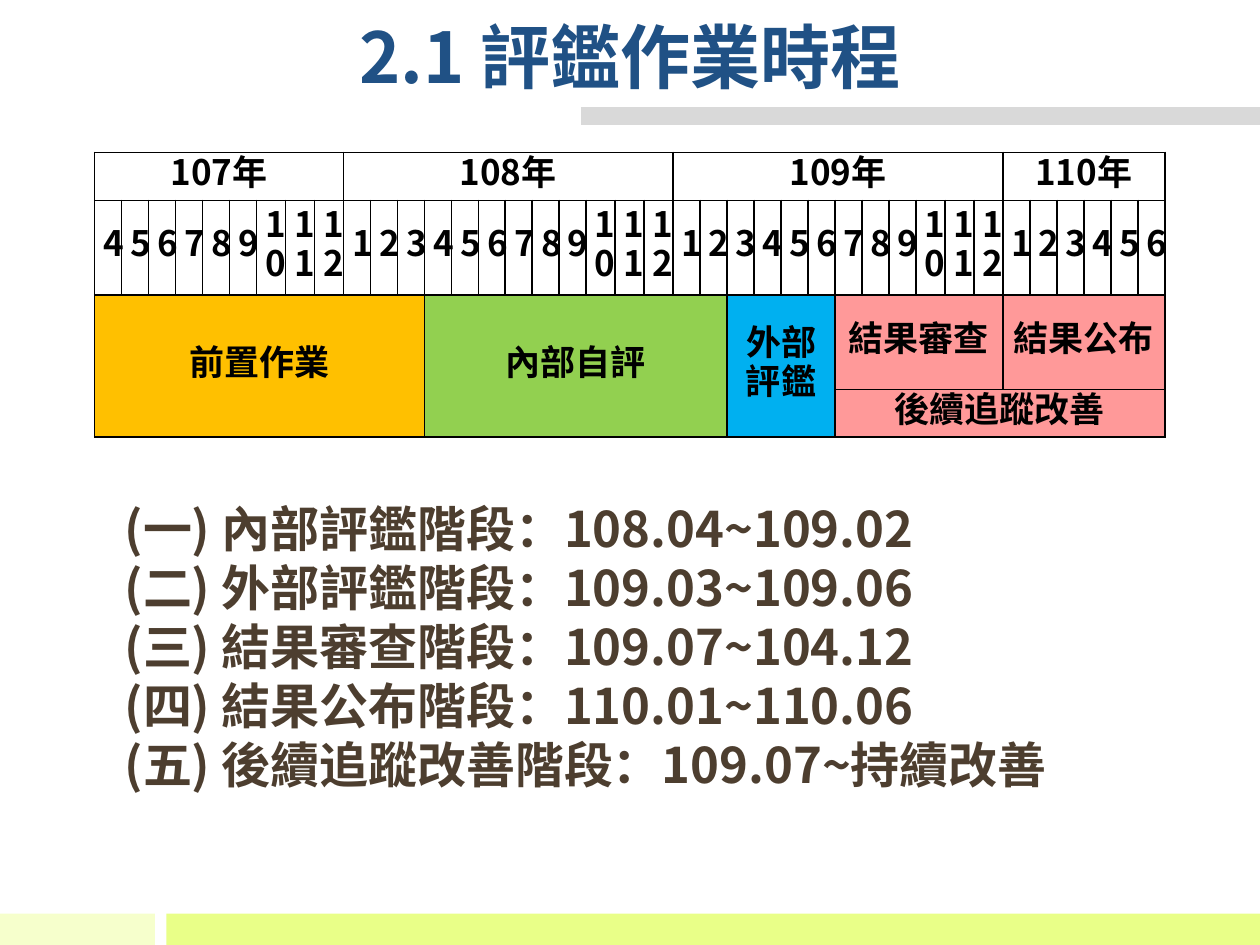
import dataclasses

import pptx
import pptx.dml.color
import pptx.enum.shapes
import pptx.enum.text
import pptx.oxml
import pptx.oxml.ns
import pptx.util

Inches = pptx.util.Inches
Pt = pptx.util.Pt
ALIGN = pptx.enum.text.PP_ALIGN


@dataclasses.dataclass(frozen=True)
class Theme:
    """Colours, font and type sizes of the slide."""
    font: str = "Noto Sans CJK SC"
    title_color: str = "205185"
    body_color: str = "4D3E2F"
    black: str = "000000"
    rule: str = "D9D9D9"
    pale_lime: str = "F6FFCC"
    lime: str = "E9FF88"
    preparation: str = "FFC000"
    internal: str = "92D050"
    external: str = "00B0F0"
    result: str = "FF9999"
    title_size: int = 40
    body_size: int = 28
    table_size: int = 20


THEME = Theme()
YEARS = [("107年", range(4, 13)), ("108年", range(1, 13)),
         ("109年", range(1, 13)), ("110年", range(1, 7))]
PHASES = [
    ("前置作業", 2, 0, 2, 12, THEME.preparation),
    ("內部自評", 2, 12, 2, 11, THEME.internal),
    ("外部評鑑", 2, 23, 2, 4, THEME.external),
    ("結果審查", 2, 27, 1, 6, THEME.result),
    ("結果公布", 2, 33, 1, 6, THEME.result),
    ("後續追蹤改善", 3, 27, 1, 12, THEME.result),
]
STAGES = [
    "(一) 內部評鑑階段：108.04~109.02",
    "(二) 外部評鑑階段：109.03~109.06",
    "(三) 結果審查階段：109.07~104.12",
    "(四) 結果公布階段：110.01~110.06",
    "(五) 後續追蹤改善階段：109.07~持續改善",
]
TABLE_WIDTH = 8.5
TWO_DIGIT_WIDTH = 0.23
ROW_HEIGHTS = [0.38, 0.75, 0.75, 0.38]


def rgb(color):
    """Turn a hex string into a colour."""
    return pptx.dml.color.RGBColor.from_string(color)


def format_paragraph(paragraph, size, color, spacing, alignment):
    """Set spacing, alignment and bold type of a paragraph."""
    paragraph.alignment = alignment
    paragraph.line_spacing = spacing
    for run in paragraph.runs:
        run.font.name = THEME.font
        run.font.size = Pt(size)
        run.font.bold = True
        run.font.color.rgb = rgb(color)
        east_asian = pptx.oxml.parse_xml(
            f'<a:ea {pptx.oxml.ns.nsdecls("a")} typeface="{THEME.font}"/>')
        run.font._element.append(east_asian)


def add_bar(slide, left, width, color):
    """Add a coloured bar along the foot of the slide."""
    bar = slide.shapes.add_shape(
        pptx.enum.shapes.MSO_SHAPE.RECTANGLE,
        Inches(left), Inches(7.25), Inches(width), Inches(0.25))
    bar.shadow.inherit = False
    bar.fill.solid()
    bar.fill.fore_color.rgb = rgb(color)
    bar.line.fill.background()


def add_rule(slide):
    """Add the thick grey rule below the title."""
    rule = slide.shapes.add_connector(
        pptx.enum.shapes.MSO_CONNECTOR.STRAIGHT,
        Inches(4.61), Inches(0.92), Inches(10), Inches(0.92))
    rule.line.color.rgb = rgb(THEME.rule)
    rule.line.width = Pt(10)
    rule._element.spPr.append(pptx.oxml.parse_xml(
        f'<a:effectLst {pptx.oxml.ns.nsdecls("a")}/>'))


def add_text_box(slide, left, top, width, height, text):
    """Add a wrapping text box and return its frame."""
    box = slide.shapes.add_textbox(
        Inches(left), Inches(top), Inches(width), Inches(height))
    box.text_frame.word_wrap = True
    box.text_frame.text = text
    return box.text_frame


def add_title(slide):
    """Add the centred title."""
    frame = add_text_box(slide, 0, 0.13, 10, 1.29, "2.1 評鑑作業時程")
    format_paragraph(frame.paragraphs[0], THEME.title_size,
                     THEME.title_color, 0.9, ALIGN.CENTER)


def add_stages(slide):
    """Add the list of stages and their dates."""
    frame = add_text_box(slide, 0.72, 3.91, 8.74, 2.46, "\n".join(STAGES))
    frame.auto_size = pptx.enum.text.MSO_AUTO_SIZE.SHAPE_TO_FIT_TEXT
    for paragraph in frame.paragraphs:
        format_paragraph(paragraph, THEME.body_size, THEME.body_color,
                         Pt(33.7), ALIGN.LEFT)
        properties = paragraph._p.get_or_add_pPr()
        properties.set("marL", str(Inches(0.17)))
        properties.set("indent", "0")


def style_cell(cell):
    """Give a cell thin black borders, tight margins and no fill."""
    cell.margin_left = cell.margin_right = Inches(0.07)
    cell.margin_top = cell.margin_bottom = 0
    cell.vertical_anchor = pptx.enum.text.MSO_ANCHOR.MIDDLE
    cell.fill.background()
    for index, side in enumerate(("lnL", "lnR", "lnT", "lnB")):
        border = pptx.oxml.parse_xml(
            f'<a:{side} {pptx.oxml.ns.nsdecls("a")} w="{Pt(1)}"><a:solidFill>'
            f'<a:srgbClr val="{THEME.black}"/></a:solidFill></a:{side}>')
        cell._tc.get_or_add_tcPr().insert(index, border)


def fill_cell(table, text, row, column, rows=1, columns=1, color=None):
    """Write a cell, merging and colouring it where asked."""
    cell = table.cell(row, column)
    if rows * columns > 1:
        cell.merge(table.cell(row + rows - 1, column + columns - 1))
    cell.text_frame.text = text
    format_paragraph(cell.text_frame.paragraphs[0], THEME.table_size,
                     THEME.black, Pt(22), ALIGN.CENTER)
    if color:
        cell.fill.solid()
        cell.fill.fore_color.rgb = rgb(color)


def add_schedule(slide):
    """Add the table of years, months and phases."""
    months = [month for year, span in YEARS for month in span]
    wide_count = sum(month > 9 for month in months)
    narrow_width = ((TABLE_WIDTH - wide_count * TWO_DIGIT_WIDTH)
                    / (len(months) - wide_count))
    table = slide.shapes.add_table(
        len(ROW_HEIGHTS), len(months), Inches(0.75), Inches(1.21),
        Inches(TABLE_WIDTH), Inches(sum(ROW_HEIGHTS))).table
    table.first_row = table.horz_banding = False
    for row, height in zip(table.rows, ROW_HEIGHTS):
        row.height = Inches(height)
    for cell in table.iter_cells():
        style_cell(cell)
    start = 0
    for year, span in YEARS:
        fill_cell(table, year, 0, start, columns=len(span))
        start += len(span)
    for index, month in enumerate(months):
        width = TWO_DIGIT_WIDTH if month > 9 else narrow_width
        table.columns[index].width = Inches(width)
        fill_cell(table, str(month), 1, index)
    for phase in PHASES:
        fill_cell(table, *phase)


def main():
    """Build the slide and save it."""
    presentation = pptx.Presentation()
    presentation.slide_width = Inches(10)
    presentation.slide_height = Inches(7.5)
    slide = presentation.slides.add_slide(presentation.slide_layouts[6])
    add_bar(slide, 0, 1.23, THEME.pale_lime)
    add_bar(slide, 1.32, 8.68, THEME.lime)
    add_rule(slide)
    add_stages(slide)
    add_title(slide)
    add_schedule(slide)
    presentation.save("out.pptx")


if __name__ == "__main__":
    main()
